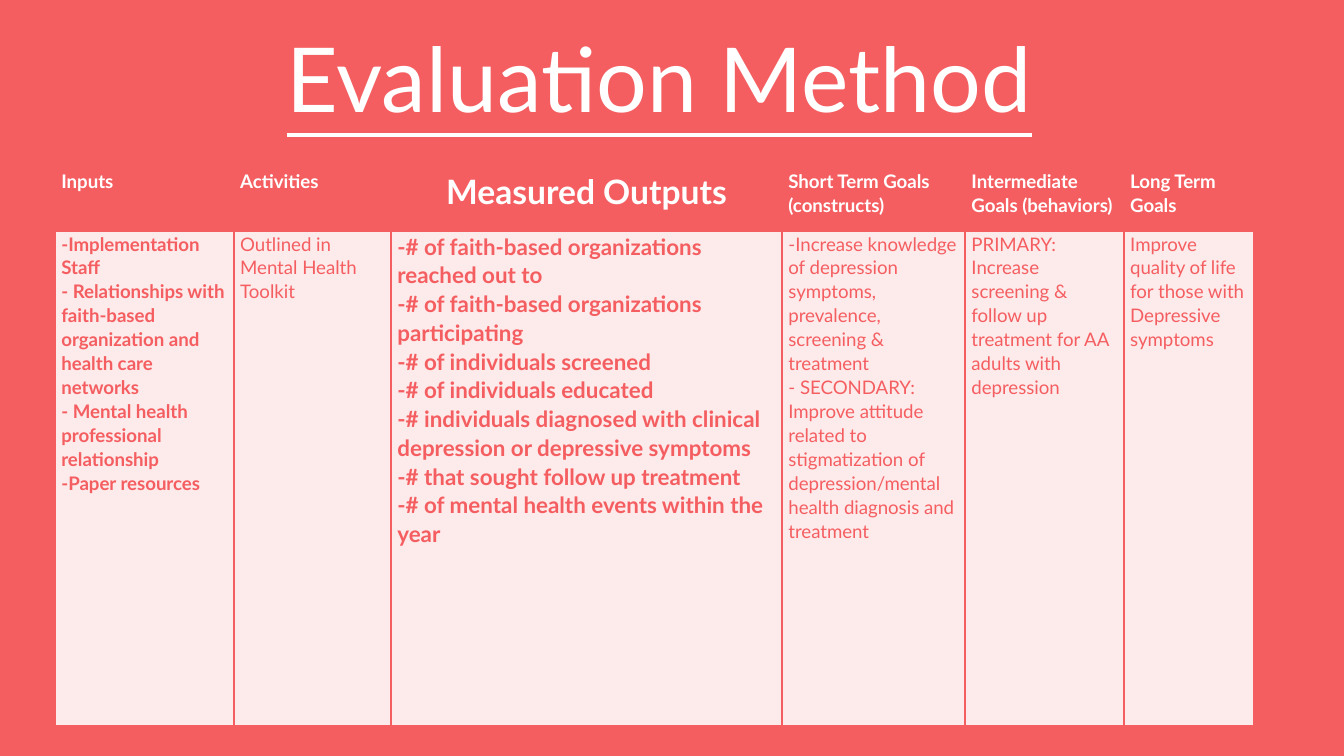
from dataclasses import dataclass

from lxml import etree
from pptx import Presentation
from pptx import util as u
from pptx.dml.color import RGBColor
from pptx.enum import text
from pptx.oxml import ns


@dataclass(frozen=True)
class Theme:
    font: str = "Lato"
    coral: str = "F55E61"
    blush: str = "FDEAEA"
    white: str = "FFFFFF"
    title: int = 48
    head: int = 18
    key: int = 12
    body: int = 10


THEME = Theme()
LEFT, MID = text.PP_ALIGN.LEFT, text.PP_ALIGN.CENTER

# Column: width in cm, heading, body lines, format of heading and body
COLS = [
    (3.38, "Inputs", [
        "-Implementation Staff",
        "- Relationships with faith-based organization and health care networks",
        "- Mental health professional relationship",
        "-Paper resources",
    ], {}, {"bold": True}),
    (2.97, "Activities", ["Outlined in Mental Health Toolkit"], {}, {}),
    (7.39, "Measured Outputs", [
        "-# of faith-based organizations reached out to",
        "-# of faith-based organizations participating",
        "-# of individuals screened",
        "-# of individuals educated",
        "-# individuals diagnosed with clinical depression or depressive symptoms",
        "-# that sought follow up treatment",
        "-# of mental health events within the year",
    ], {"size": THEME.head, "align": MID}, {"size": THEME.key, "bold": True}),
    (3.46, "Short Term Goals (constructs)", [
        "-Increase knowledge of depression symptoms, prevalence, screening & treatment",
        "- SECONDARY: Improve attitude related to stigmatization of "
        "depression/mental health diagnosis and treatment",
    ], {}, {}),
    (3, "Intermediate Goals (behaviors)", [
        "PRIMARY: Increase screening & follow up treatment for AA adults with depression",
    ], {}, {}),
    (2.46, "Long Term Goals", [
        "Improve quality of life for those with Depressive symptoms",
    ], {}, {}),
]
ROWS = (1.19, 9.35)


def write(frame, lines, *, size=THEME.body, color=THEME.coral, bold=False,
          line=False, align=LEFT, space=1.07):
    """Fill a text frame, one paragraph per line."""
    for i, words in enumerate(lines):
        para = frame.paragraphs[0] if i == 0 else frame.add_paragraph()
        para.alignment = align
        para.line_spacing = space
        run = para.add_run()
        run.text = words
        font = run.font
        font.name, font.size = THEME.font, u.Pt(size)
        font.bold, font.underline = bold, line
        font.color.rgb = RGBColor.from_string(color)


def border(cell, color, width=1):
    """Draw all four cell borders; they must come before the fill."""
    props = cell._tc.get_or_add_tcPr()
    for i, side in enumerate(("lnL", "lnR", "lnT", "lnB")):
        edge = etree.Element(ns.qn(f"a:{side}"), w=str(u.Pt(width)))
        fill = etree.SubElement(edge, ns.qn("a:solidFill"))
        etree.SubElement(fill, ns.qn("a:srgbClr"), val=color)
        props.insert(i, edge)


class Page:
    def __init__(self, deck, theme):
        self.theme = theme
        self.slide = deck.slides.add_slide(deck.slide_layouts[5])
        fill = self.slide.background.fill
        fill.solid()
        fill.fore_color.rgb = RGBColor.from_string(theme.coral)

    def title(self, words, x, y, w, h):
        box = self.slide.shapes.title
        box.left, box.top, box.width, box.height = map(u.Cm, (x, y, w, h))
        frame = box.text_frame
        frame.word_wrap = True
        frame.auto_size = text.MSO_AUTO_SIZE.NONE
        frame.vertical_anchor = text.MSO_ANCHOR.TOP
        frame.margin_left = frame.margin_right = u.Cm(0.25)
        frame.margin_top = frame.margin_bottom = u.Cm(0.25)
        write(frame, [words], size=self.theme.title, color=self.theme.white,
              line=True, align=MID, space=1.0)

    def cell(self, cell, lines, fill, **style):
        cell.margin_left = cell.margin_right = u.Cm(0.12)
        cell.margin_top = cell.margin_bottom = 0
        cell.vertical_anchor = text.MSO_ANCHOR.TOP
        cell.fill.solid()
        cell.fill.fore_color.rgb = RGBColor.from_string(fill)
        border(cell, self.theme.coral)
        write(cell.text_frame, lines, **style)

    def table(self, cols, rows, x, y):
        wide = sum(col[0] for col in cols)
        grid = self.slide.shapes.add_table(
            len(rows), len(cols), u.Cm(x), u.Cm(y), u.Cm(wide), u.Cm(sum(rows))
        ).table
        grid.first_row = grid.horz_banding = False
        for row, high in zip(grid.rows, rows):
            row.height = u.Cm(high)
        for i, (width, head, lines, top, low) in enumerate(cols):
            grid.columns[i].width = u.Cm(width)
            self.cell(grid.cell(0, i), [head], self.theme.coral,
                      color=self.theme.white, bold=True, **top)
            self.cell(grid.cell(1, i), lines, self.theme.blush, **low)


def main():
    deck = Presentation()
    deck.slide_width, deck.slide_height = u.Cm(25.4), u.Cm(14.29)
    page = Page(deck, THEME)
    # Heading
    page.title("Evaluation Method", 1.17, 0.18, 22.58, 5)
    # Logic model
    page.table(COLS, ROWS, 1.04, 3.18)
    deck.save("out.pptx")


if __name__ == "__main__":
    main()
